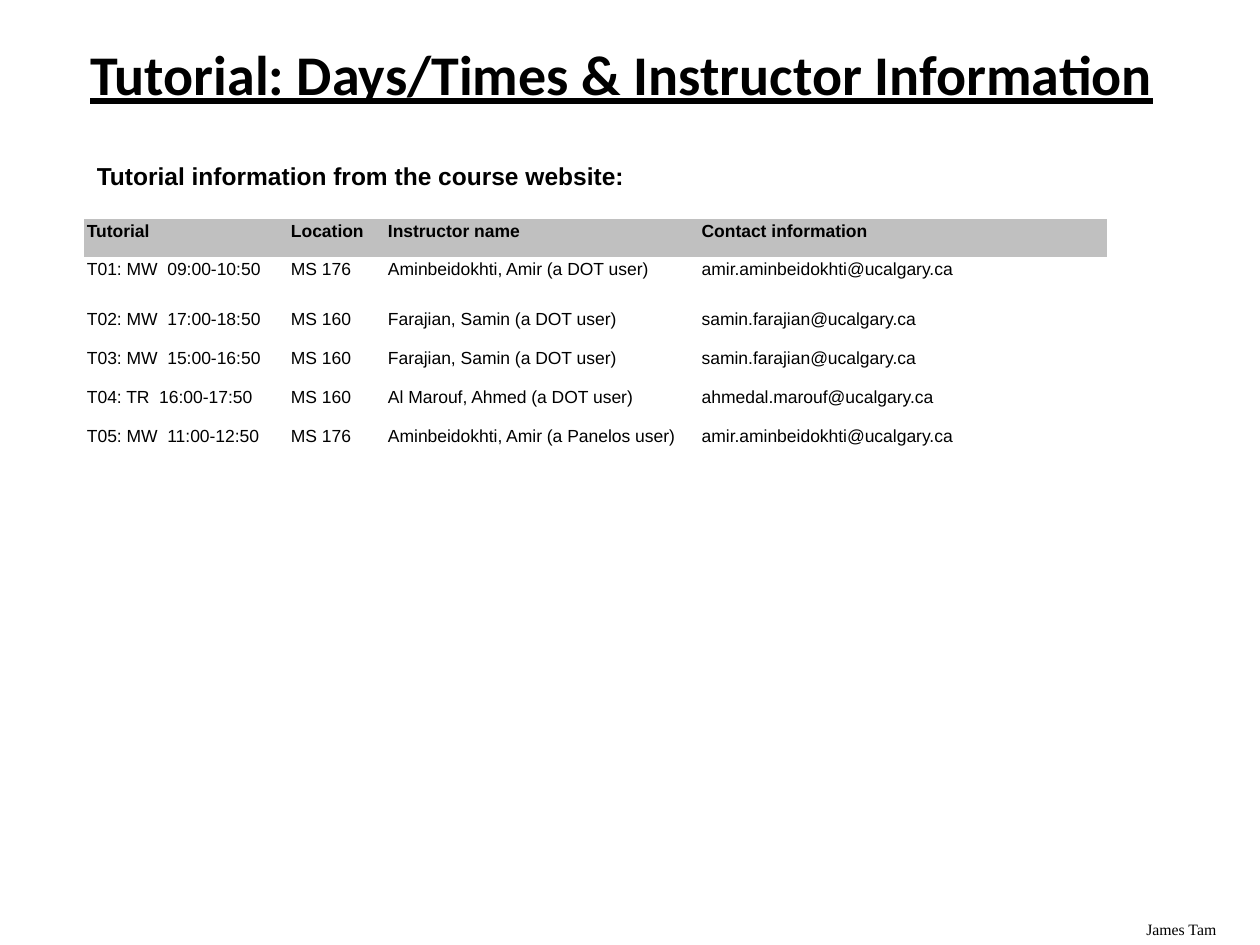
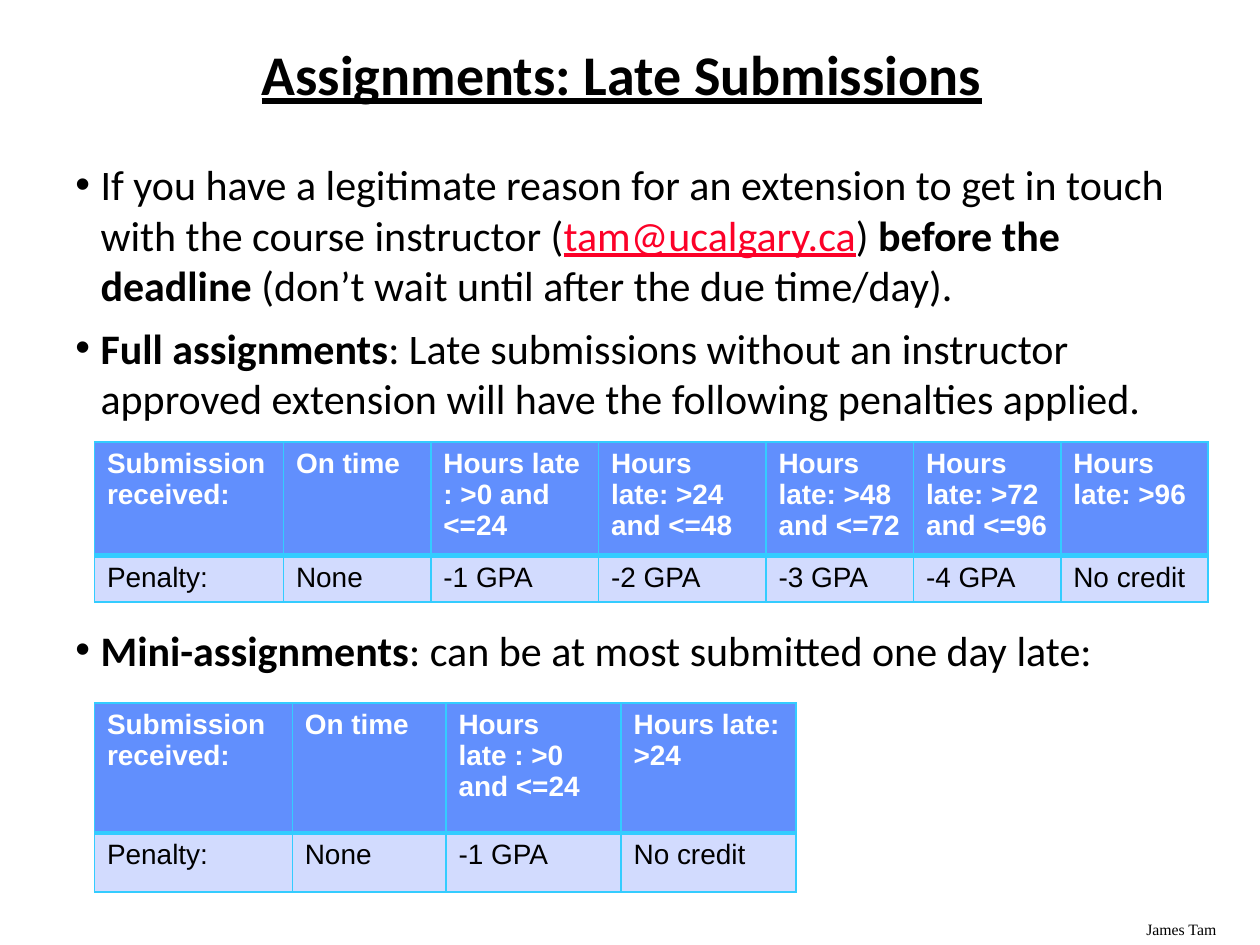
from lxml.etree import SubElement
from pptx import Presentation
from pptx.dml.color import RGBColor
from pptx.enum.text import MSO_ANCHOR, PP_ALIGN
from pptx.oxml.ns import qn
from pptx.util import Pt

PX = 9144  # EMU per px, 100 px to the inch
COLORS = {
    "text": "000000", "link": "FC0128", "white": "FFFFFF", "grey": "C0C0C0",
    "header": "618FFD", "row": "D2DBFE", "border": "33CCFF",
}
NO_STYLE_NO_GRID = "{2D5ABB26-0587-4C30-8999-92F81FD0307C}"


class Deck:
    def __init__(self, prs):
        self.prs = prs
        self.slide = None

    def new_slide(self, title):
        self.slide = self.prs.slides.add_slide(self.prs.slide_layouts[6])
        p = self.text(title, 47, 33, 893, 57, 32, "Calibri", bold=True, anchor=MSO_ANCHOR.MIDDLE)
        p.font.underline = True
        p.alignment = PP_ALIGN.CENTER
        p.line_spacing = 0.9
        self.text("James Tam", 900, 725, 100, 25, 9, "Times New Roman")

    def style(self, font, size, name, color="text", bold=False):
        font.size = Pt(size)
        font.name = name
        font.bold = bold
        font.color.rgb = RGBColor.from_string(COLORS[color])

    def frame(self, x, y, w, h):
        tf = self.slide.shapes.add_textbox(x * PX, y * PX, w * PX, h * PX).text_frame
        tf.word_wrap = True
        return tf

    def text(self, text, x, y, w, h, size, name, bold=False, anchor=MSO_ANCHOR.TOP):
        tf = self.frame(x, y, w, h)
        tf.vertical_anchor = anchor
        p = tf.paragraphs[0]
        p.text = text
        self.style(p.font, size, name, bold=bold)
        return p

    def bullets(self, items, x, y, w, h):
        """Each item is (space before in points, runs); a run is (text, kind)."""
        tf = self.frame(x, y, w, h)
        for i, (space, runs) in enumerate(items):
            p = tf.add_paragraph() if i else tf.paragraphs[0]
            p.space_before = Pt(space)
            self.style(p.font, 24, "Calibri")
            pPr = p._p.get_or_add_pPr()
            pPr.set("marL", str(20 * PX))
            pPr.set("indent", str(-20 * PX))
            for tag, attrs in (("a:buFont", {"typeface": "Arial"}), ("a:buChar", {"char": "•"})):
                pPr.insert_element_before(pPr.makeelement(qn(tag), attrs),
                                          "a:tabLst", "a:defRPr", "a:extLst")
            for text, kind in runs:
                r = p.add_run()
                r.text = text
                self.style(r.font, 24, "Calibri", "link" if kind == "link" else "text", kind == "bold")
                r.font.underline = kind == "link"

    def table(self, rows, x, y, widths, heights, size, fills, header_color="text",
              margin=None, bordered=False):
        """Draw rows of text; fills gives the header colour, then the colour of other rows."""
        gf = self.slide.shapes.add_table(len(rows), len(widths), x * PX, y * PX,
                                         sum(widths) * PX, sum(heights) * PX)
        table = gf.table
        table.horz_banding = False
        table._tbl.tblPr.find(qn("a:tableStyleId")).text = NO_STYLE_NO_GRID
        for column, width in zip(table.columns, widths):
            column.width = width * PX
        for i, (row, height) in enumerate(zip(rows, heights)):
            table.rows[i].height = height * PX
            is_header = i == 0
            for j, text in enumerate(row):
                cell = table.cell(i, j)
                cell.text = text
                if margin is not None:
                    cell.margin_left = cell.margin_right = margin * PX
                    cell.margin_top = cell.margin_bottom = margin * PX
                self.style(cell.text_frame.paragraphs[0].font, size, "Arial",
                           header_color if is_header else "text", is_header)
                if bordered:
                    self.borders(cell, thick="B" if is_header else "T")
                cell.fill.solid()
                cell.fill.fore_color.rgb = RGBColor.from_string(COLORS[fills[min(i, 1)]])

    def borders(self, cell, thick):
        tcPr = cell._tc.get_or_add_tcPr()
        for side in "LRTB":
            ln = SubElement(tcPr, qn(f"a:ln{side}"), w=str(Pt(3 if side == thick else 1)))
            SubElement(SubElement(ln, qn("a:solidFill")), qn("a:srgbClr"), val=COLORS["border"])


def tutorial_slide(deck):
    deck.new_slide("Tutorial: Days/Times & Instructor Information")
    deck.table([[""] * 3] * 12, 34, 140, [298, 255, 402], [36] * 12, 10,
               ("white", "white"), margin=2)
    deck.text("Tutorial information from the course website:", 67, 123, 933, 34, 14, "Arial", bold=True)
    amir, samin, ahmed = (f"{name}@ucalgary.ca" for name in
                          ("amir.aminbeidokhti", "samin.farajian", "ahmedal.marouf"))
    tutorials = [
        ("Tutorial", "Location", "Instructor name", "Contact information"),
        ("T01: MW  09:00-10:50", "MS 176", "Aminbeidokhti, Amir (a DOT user)", amir),
        ("T02: MW  17:00-18:50", "MS 160", "Farajian, Samin (a DOT user)", samin),
        ("T03: MW  15:00-16:50", "MS 160", "Farajian, Samin (a DOT user)", samin),
        ("T04: TR  16:00-17:50", "MS 160", "Al Marouf, Ahmed (a DOT user)", ahmed),
        ("T05: MW  11:00-12:50", "MS 176", "Aminbeidokhti, Amir (a Panelos user)", amir),
    ]
    deck.table(tutorials, 67, 174, [162, 77, 249, 324], [30, 40, 31, 31, 31, 50], 10,
               ("grey", "white"), margin=2)


def late_slide(deck):
    deck.new_slide("Assignments: Late Submissions")
    deck.bullets([
        (0, [("If you have a legitimate reason for an extension to get in touch with the "
              "course instructor (", ""),
             ("tam@ucalgary.ca", "link"), (") ", ""), ("before the deadline ", "bold"),
             ("(don’t wait until after the due time/day).", "")]),
        (7, [("Full assignments", "bold"),
             (": Late submissions without an instructor approved extension will have the "
              "following penalties applied.", "")]),
        (115, [("Mini-assignments", "bold"), (": can be at most submitted one day late:", "")]),
    ], 50, 121, 894, 587)
    full = [
        ("Submission received:", "On time", "Hours late : >0 and <=24", "Hours late: >24 and <=48",
         "Hours late: >48 and <=72", "Hours late: >72 and <=96", "Hours late: >96"),
        ("Penalty:", "None", "-1 GPA", "-2 GPA", "-3 GPA", "-4 GPA", "No credit"),
    ]
    mini = [
        ("Submission received:", "On time", "Hours late : >0 and <=24", "Hours late: >24"),
        ("Penalty:", "None", "-1 GPA", "No credit"),
    ]
    for rows, y, widths, heights in (
        (full, 351, [150, 117, 133, 133, 117, 117, 117], [88, 28]),
        (mini, 558, [157, 122, 139, 139], [103, 47]),
    ):
        deck.table(rows, 75, y, widths, heights, 16, ("header", "row"), "white", bordered=True)


def main():
    prs = Presentation()
    prs.slide_width, prs.slide_height = 1000 * PX, 750 * PX
    deck = Deck(prs)
    tutorial_slide(deck)
    late_slide(deck)
    prs.save("out.pptx")


if __name__ == "__main__":
    main()
